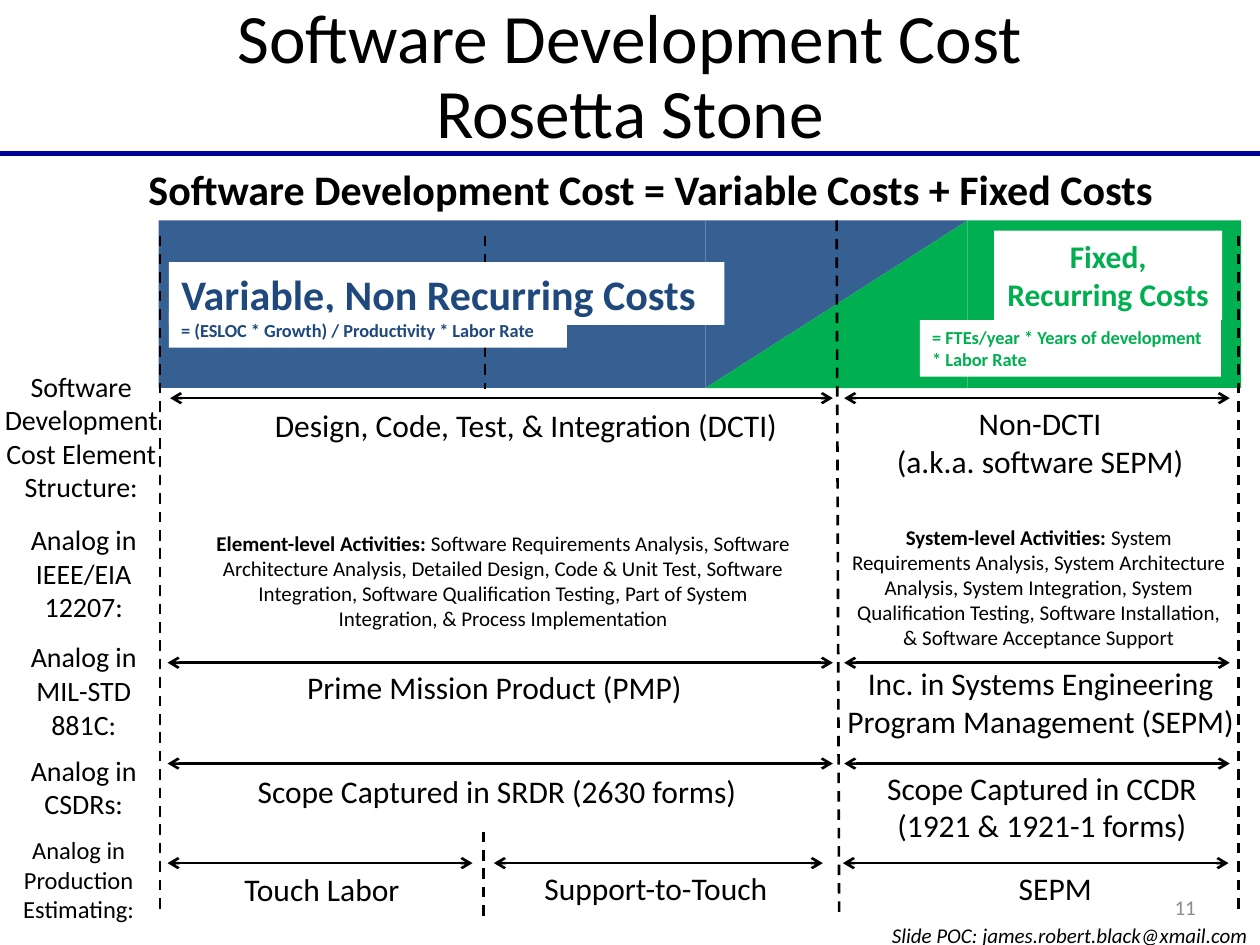
from pptx import Presentation
from pptx.dml.color import RGBColor
from pptx.enum.dml import MSO_LINE
from pptx.enum.shapes import MSO_CONNECTOR, MSO_SHAPE
from pptx.enum.text import MSO_ANCHOR, PP_ALIGN
from pptx.oxml.ns import qn
from pptx.util import Inches, Pt
from lxml.etree import SubElement

COLUMNS, ROWS = 100, 75
BLACK, WHITE, GREY, RULE = "000000", "FFFFFF", "8C8C8C", "000099"
BLUE, NAVY, GREEN = "376092", "1F497D", "00B050"
LEFT, CENTER, RIGHT = PP_ALIGN.LEFT, PP_ALIGN.CENTER, PP_ALIGN.RIGHT


def rgb(value):
    return RGBColor.from_string(value)


class SlideBuilder:
    """Draws on a grid of 100 columns by 75 rows."""

    font = "Calibri"

    def __init__(self, deck):
        self.shapes = deck.slides.add_slide(deck.slide_layouts[6]).shapes
        self.column = deck.slide_width / COLUMNS
        self.row = deck.slide_height / ROWS

    def place(self, x, y, x2, y2):
        return (round(x * self.column), round(y * self.row),
                round(x2 * self.column), round(y2 * self.row))

    def block(self, box, fill, kind=MSO_SHAPE.RECTANGLE, flip=None):
        shape = self.shapes.add_shape(kind, *self.place(*box))
        shape.shadow.inherit = False
        shape.fill.solid()
        shape.fill.fore_color.rgb = rgb(fill)
        shape.line.fill.background()
        if flip:
            shape._element.spPr.get_or_add_xfrm().set(flip, "1")
        return shape

    def line(self, start, end, color=BLACK, width=1.5, dashed=False, arrows=False):
        line = self.shapes.add_connector(MSO_CONNECTOR.STRAIGHT,
                                         *self.place(*start, *end))
        line.line.color.rgb = rgb(color)
        line.line.width = Pt(width)
        if dashed:
            line.line.dash_style = MSO_LINE.DASH
        properties = line._element.spPr
        if arrows:
            for end_tag in ("a:headEnd", "a:tailEnd"):
                SubElement(properties.find(qn("a:ln")), qn(end_tag), type="arrow")
        SubElement(properties, qn("a:effectLst"))

    def text(self, box, words, size=18, color=BLACK, align=CENTER, fill=None,
             bold=False, italic=False, lead="", anchor=MSO_ANCHOR.TOP, spacing=None):
        """Each line of words is a paragraph; lead is a bold opening run."""
        shape = (self.block(box, fill) if fill
                 else self.shapes.add_textbox(*self.place(*box)))
        frame = shape.text_frame
        frame.word_wrap = True
        frame.vertical_anchor = anchor
        for index, wording in enumerate(words.split("\n")):
            paragraph = frame.add_paragraph() if index else frame.paragraphs[0]
            if lead:
                opening = paragraph.add_run()
                opening.text = lead
                opening.font.bold = True
                paragraph.add_run().text = wording
            else:
                paragraph.text = wording
            paragraph.alignment = align
            paragraph.line_spacing = spacing
            font = paragraph.font
            font.name, font.size, font.color.rgb = self.font, Pt(size), rgb(color)
            font.bold, font.italic = bold, italic


def main():
    deck = Presentation()
    deck.slide_width, deck.slide_height = Inches(10), Inches(7.5)
    slide = SlideBuilder(deck)

    # Title, rule and equation
    slide.line((0, 12.2), (100, 12.2), RULE, 3)
    slide.text((5, 0, 90, 12.5), "Software Development Cost\vRosetta Stone", 39.6,
               anchor=MSO_ANCHOR.MIDDLE, spacing=0.9)
    slide.text((10.8, 12.5, 85.8, 5),
               "Software Development Cost = Variable Costs + Fixed Costs",
               24, align=LEFT, fill=WHITE, bold=True)

    # Cost band: variable share tapers off as the fixed share grows
    band_top, band_height = 17.5, 13.3
    slide.block((12.6, band_top, 43.4, band_height), BLUE)
    slide.block((76.8, band_top, 21.7, band_height), GREEN)
    for color, flip in ((BLUE, "flipV"), (GREEN, "flipH")):
        slide.block((56, band_top, 20.8, band_height), color,
                    MSO_SHAPE.RIGHT_TRIANGLE, flip)

    # Dashed column dividers
    for x, top, x2, bottom in ((38.5, 18.7, 38.5, 30.9), (12.7, 18.7, 12.7, 72.5),
                               (66.4, 17.5, 66.6, 72.5), (98.3, 18.7, 98.3, 72.5),
                               (38.4, 66, 38.4, 72.8)):
        slide.line((x, top), (x2, bottom), dashed=True)

    # Spans of each comparison row
    variable_span, fixed_span = (13.3, 66.1), (67, 97.6)
    spans = {31.6: ((13.5, 66.1), fixed_span),
             52.6: (variable_span, fixed_span),
             60.6: (variable_span, fixed_span),
             68.5: ((13.3, 37.5), (39.2, 65.3), (66.9, 97.5))}
    for y, row_spans in spans.items():
        for start, end in row_spans:
            slide.line((start, y), (end, y), arrows=True)

    # Captions on the cost band
    for box, words, size, color, align in (
            ((13.4, 20.8, 44.1, 5), "Variable, Non Recurring Costs", 24, NAVY, LEFT),
            ((13.4, 24.8, 31.6, 2.8),
             "= (ESLOC * Growth) / Productivity * Labor Rate", 10.5, NAVY, LEFT),
            ((78.9, 18.3, 18.1, 7.1), "Fixed, Recurring Costs", 18, GREEN, CENTER),
            ((73, 25.4, 23.9, 4.5),
             "= FTEs/year * Years of development * Labor Rate", 10.5, GREEN, LEFT)):
        slide.text(box, words, size, color, align, fill=WHITE, bold=True)

    # Row labels
    for box, label, size in (
            ((-1.4, 28.8, 15.7, 11.8),
             "Software Development Cost Element\nStructure:", 16),
            ((0, 41, 13.3, 9.1), "Analog in IEEE/EIA 12207:", 16),
            ((0, 50.3, 13.3, 9.1), "Analog in MIL-STD 881C:", 16),
            ((0, 59.3, 13.3, 6.4), "Analog in CSDRs:", 16),
            ((-0.4, 65.8, 13.3, 8.1), "Analog in Production Estimating:", 14)):
        slide.text(box, label, size)

    # Row entries
    for box, entry in (
            ((20.3, 31.7, 42.9, 7.1), "Design, Code, Test, & Integration (DCTI)"),
            ((69.2, 31.6, 26.7, 7.1), "Non-DCTI\n(a.k.a. software SEPM)"),
            ((15.5, 52.5, 47.5, 4), "Prime Mission Product (PMP)"),
            ((65.4, 52.2, 34.4, 7.1),
             "Inc. in Systems Engineering\nProgram Management (SEPM)"),
            ((15.7, 60.8, 47.5, 4), "Scope Captured in SRDR (2630 forms)"),
            ((65.5, 60.5, 34.4, 7.1), "Scope Captured in CCDR\n(1921 & 1921-1 forms)"),
            ((12.5, 68.6, 26.1, 4), "Touch Labor"),
            ((40.8, 68.5, 22.5, 4), "Support-to-Touch"),
            ((72.5, 68.5, 22.5, 4), "SEPM")):
        slide.text(box, entry)

    # Activities
    slide.text((15.8, 41.6, 48.3, 9.1),
               "Software Requirements Analysis, Software Architecture Analysis, "
               "Detailed Design, Code & Unit Test, Software Integration, Software "
               "Qualification Testing, Part of System Integration, & Process "
               "Implementation", 12, lead="Element-level Activities: ")
    slide.text((66.6, 41.1, 31.7, 11.1),
               "System Requirements Analysis, System Architecture Analysis, System "
               "Integration, System Qualification Testing, Software Installation, "
               "& Software Acceptance Support", 12, lead="System-level Activities: ")

    # Footer
    slide.text((72.6, 70, 23.3, 4), "11", 12, GREY, RIGHT, anchor=MSO_ANCHOR.MIDDLE)
    slide.text((10, 72.7, 90, 3), "Slide POC: james.robert.black@xmail.com", 12,
               align=RIGHT, italic=True)

    deck.save("out.pptx")


if __name__ == "__main__":
    main()
